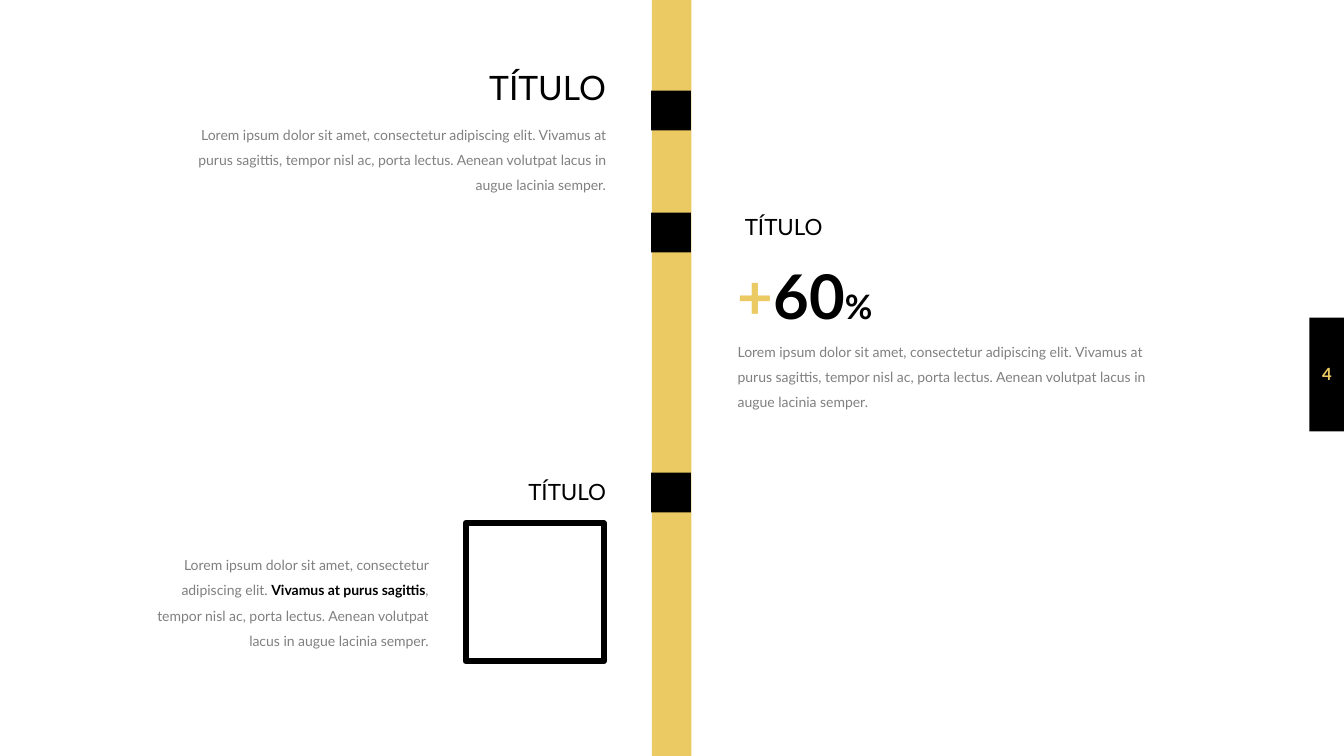
from pptx import Presentation
from pptx.dml.color import RGBColor as Rgb
from pptx.enum.shapes import MSO_SHAPE as Kind
from pptx.enum.text import MSO_ANCHOR as Anchor, MSO_AUTO_SIZE as Fit, PP_ALIGN as Align
from pptx.util import Inches, Pt

theme = {
    "font": "Lato",
    "black": Rgb.from_string("000000"),
    "gold": Rgb.from_string("EBC963"),
    "gray": Rgb.from_string("808080"),
    "head": 24, "title": 16, "body": 10, "stat": 44, "unit": 24, "page": 12,
    "frame": 4.5,
}

deck = Presentation()
deck.slide_width, deck.slide_height = Inches(13.333), Inches(7.5)
col, row = deck.slide_width / 100, deck.slide_height / 100
slide = deck.slides.add_slide(deck.slide_layouts[6])


def grid(x, y, w, h):
    return int(x * col), int(y * row), int(w * col), int(h * row)


def write(place, parts, side=Align.LEFT, wrap=False, space=None):
    frame = slide.shapes.add_textbox(*grid(*place)).text_frame
    frame.word_wrap = wrap
    frame.auto_size = Fit.SHAPE_TO_FIT_TEXT
    para = frame.paragraphs[0]
    para.alignment = side
    if space:
        para.line_spacing = space
    for words, size, tone, bold in parts:
        run = para.add_run()
        run.text = words
        run.font.name = theme["font"]
        run.font.size = Pt(theme[size])
        run.font.color.rgb = theme[tone]
        run.font.bold = bold
    return frame


right, left = 45.83, 54.15
side, tall = 2.95, 5.25
marks = [12, 28.13, 62.53]

blocks = [
    ((97.43, 42, 2.57, 15.07), "black"),
    ((48.5, -1.2, side, 102.93), "gold"),
]
blocks += [((48.45, y, side, tall), "black") for y in marks]
blocks.append(((34.65, 69.2, 10.28, 18.27), None))
for place, tone in blocks:
    block = slide.shapes.add_shape(Kind.RECTANGLE, *grid(*place))
    block.shadow.inherit = False
    if tone:
        block.fill.solid()
        block.fill.fore_color.rgb = theme[tone]
        block.line.fill.background()
    else:
        block.fill.background()
        block.line.color.rgb = theme["black"]
        block.line.width = Pt(theme["frame"])

page = write((97.13, 45.2, 3.23, 8.53), [("4", "page", "gold", True)], Align.CENTER)
page.auto_size = Fit.NONE
page.vertical_anchor = Anchor.MIDDLE
page.margin_left = page.margin_right = page.margin_top = page.margin_bottom = 0

titles = [
    ((right - 10.65, 8.13, 10.65, 6.67), "head", Align.RIGHT),
    ((54.68, 27.47, 7.58, 4.93), "title", Align.LEFT),
    ((right - 7.58, 62.53, 7.58, 4.93), "title", Align.RIGHT),
]
for place, size, edge in titles:
    write(place, [("TÍTULO", size, "black", False)], edge)

write((left, 33.47, 12, 11.2), [
    ("+", "stat", "gold", True),
    ("60", "stat", "black", True),
    ("%", "unit", "black", True),
])

start = "Lorem ipsum dolor sit amet, consectetur adipiscing elit. "
key = "Vivamus at purus sagittis"
rest = ", tempor nisl ac, porta lectus. Aenean volutpat lacus in augue lacinia semper."
plain = [(start + key + rest, "body", "gray", False)]
mixed = [
    (start, "body", "gray", False),
    (key, "body", "black", True),
    (rest, "body", "gray", False),
]
bodies = [
    ((right - 34.13, 14.93, 34.13, 11.07), plain, Align.RIGHT),
    ((left, 43.6, 31.95, 11.07), plain, Align.LEFT),
    ((10.2, 71.87, 22.43, 14.8), mixed, Align.RIGHT),
]
for place, parts, edge in bodies:
    write(place, parts, edge, True, 1.5)

deck.save("out.pptx")
